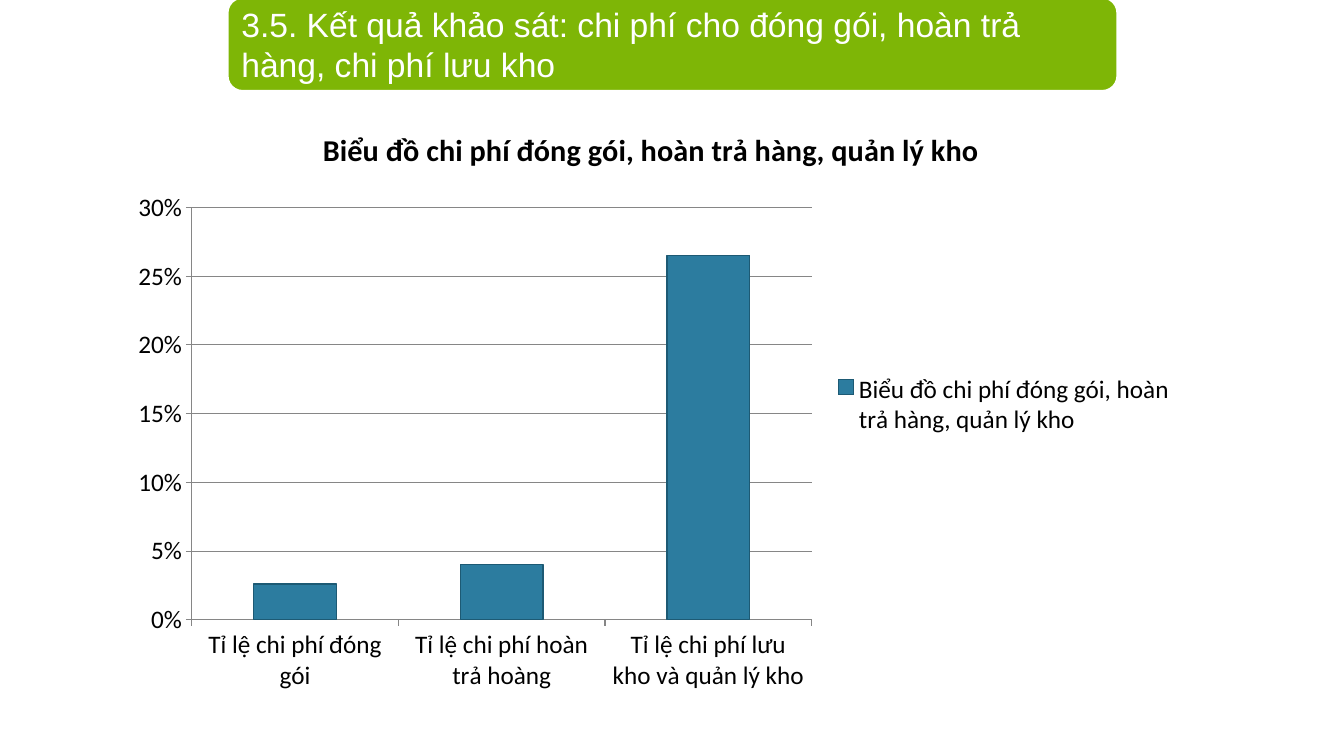
from lxml import etree
from pptx import Presentation
from pptx.chart.data import CategoryChartData
from pptx.dml.color import RGBColor
from pptx.enum.chart import XL_CHART_TYPE, XL_LEGEND_POSITION, XL_TICK_MARK
from pptx.enum.shapes import MSO_SHAPE
from pptx.enum.text import MSO_ANCHOR, PP_ALIGN
from pptx.oxml.ns import qn
from pptx.util import Inches, Pt

STACKED = XL_CHART_TYPE.COLUMN_STACKED
RIGHT = XL_LEGEND_POSITION.RIGHT
OUTSIDE = XL_TICK_MARK.OUTSIDE
ROUNDED = MSO_SHAPE.ROUNDED_RECTANGLE
MIDDLE = MSO_ANCHOR.MIDDLE
LEFT = PP_ALIGN.LEFT

HEADING = "3.5. Kết quả khảo sát: chi phí cho đóng gói, hoàn trả hàng, chi phí lưu kho"
TITLE = "Biểu đồ chi phí đóng gói, hoàn trả hàng, quản lý kho"
COSTS = {
    "Tỉ lệ chi phí đóng gói": 0.026,
    "Tỉ lệ chi phí hoàn trả hoàng": 0.04,
    "Tỉ lệ chi phí lưu kho và quản lý kho": 0.265,
}


def color(code):
    return RGBColor.from_string(code)


def style(font, name, size, code, bold=False):
    font.name, font.size, font.bold = name, Pt(size), bold
    font.color.rgb = color(code)


def outline(line, code, width):
    line.color.rgb = color(code)
    line.width = Pt(width)


def add_banner(slide, box):
    banner = slide.shapes.add_shape(ROUNDED, *map(Inches, box))
    banner.shadow.inherit = False
    banner.fill.solid()
    banner.fill.fore_color.rgb = color("7EB606")
    outline(banner.line, "FFFFFF", 2.5)
    frame = banner.text_frame
    frame.word_wrap = True
    frame.vertical_anchor = MIDDLE
    frame.text = HEADING
    text = frame.paragraphs[0]
    text.alignment = LEFT
    style(text.font, "Arial", 24, "FFFFFF")


def place_plot(chart, box):
    area = chart.plots[0]._element.getparent()
    for old in area.findall(qn("c:layout")):
        area.remove(old)
    layout = etree.Element(qn("c:layout"))
    area.insert(0, layout)
    manual = etree.SubElement(layout, qn("c:manualLayout"))
    rules = [("layoutTarget", "inner"), ("xMode", "edge"), ("yMode", "edge")]
    for tag, value in rules + list(zip("xywh", box)):
        etree.SubElement(manual, qn(f"c:{tag}")).set("val", str(value))


def add_costs(slide, box):
    data = CategoryChartData(number_format="0%")
    data.categories = list(COSTS)
    data.add_series(TITLE, list(COSTS.values()))
    chart = slide.shapes.add_chart(STACKED, *map(Inches, box), data).chart
    style(chart.font, "Calibri", 18, "000000")

    chart.has_title = True
    frame = chart.chart_title.text_frame
    frame.text = TITLE
    style(frame.paragraphs[0].font, "Calibri", 21.6, "000000", True)
    chart.chart_title.include_in_layout = False

    chart.has_legend = True
    chart.legend.position = RIGHT
    chart.legend.include_in_layout = False

    for axis in (chart.category_axis, chart.value_axis):
        axis.major_tick_mark = OUTSIDE
        outline(axis.format.line, "868686", 0.75)
    scale = chart.value_axis
    scale.minimum_scale, scale.maximum_scale, scale.major_unit = 0, 0.3, 0.05
    scale.has_major_gridlines = True
    outline(scale.major_gridlines.format.line, "868686", 0.75)
    scale.tick_labels.number_format = "0%"
    scale.tick_labels.number_format_is_linked = False

    plot = chart.plots[0]
    plot.gap_width, plot.overlap = 150, 100
    plot.vary_by_categories = False
    bars = plot.series[0].format
    bars.fill.solid()
    bars.fill.fore_color.rgb = color("2C7C9F")
    outline(bars.line, "1D5A74", 1)
    place_plot(chart, (0.07, 0.17, 0.58, 0.69))


def main():
    deck = Presentation()
    deck.slide_width, deck.slide_height = Inches(13.33), Inches(7.5)
    slide = deck.slides.add_slide(deck.slide_layouts[6])
    add_banner(slide, (2.25, -0.03, 8.84, 0.94))
    add_costs(slide, (1.16, 1.05, 10.6, 5.93))
    deck.save("out.pptx")


if __name__ == "__main__":
    main()
